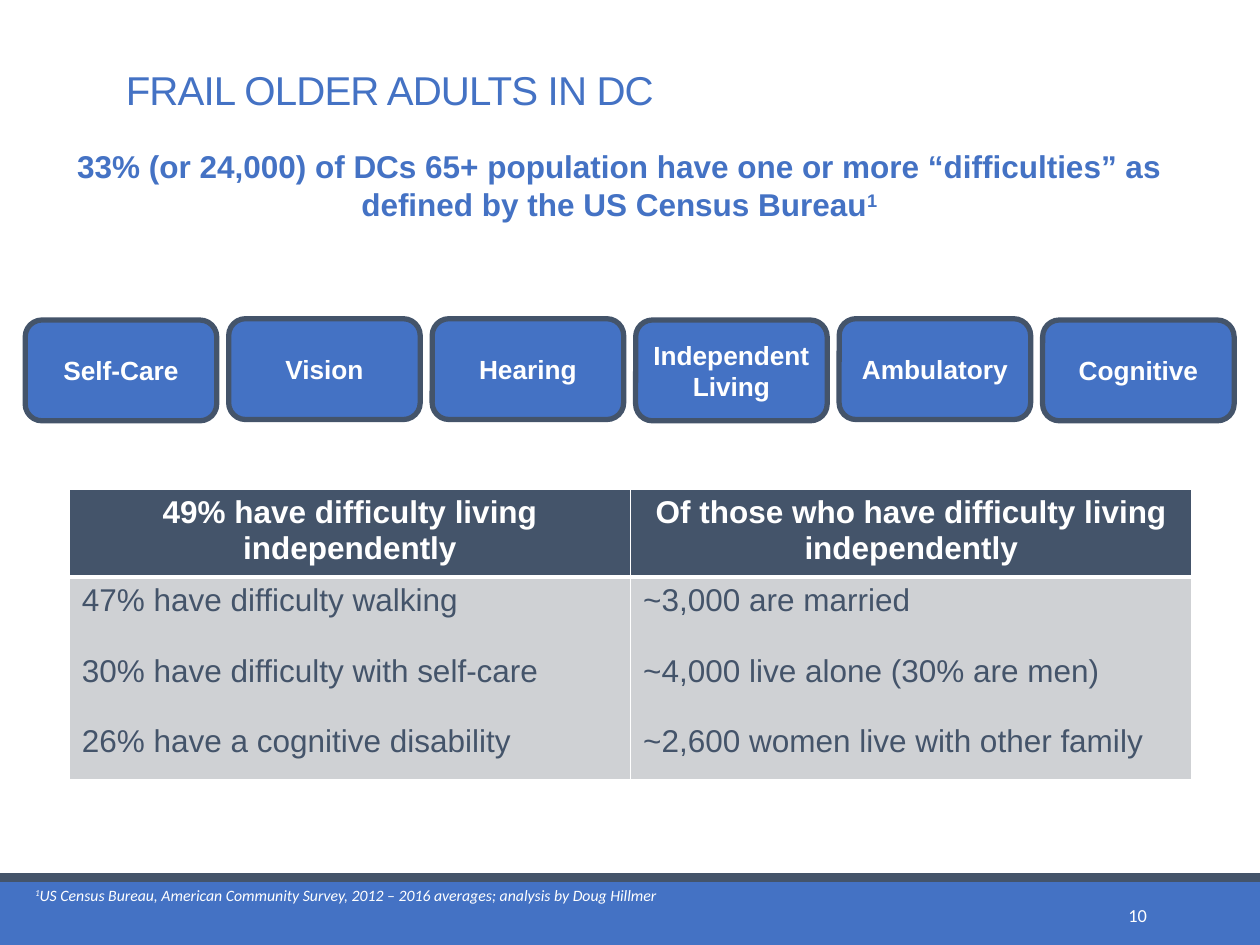
from pptx import Presentation
from pptx.dml.color import RGBColor
from pptx.enum.shapes import MSO_SHAPE
from pptx.enum.text import MSO_ANCHOR, PP_ALIGN
from pptx.oxml import parse_xml
from pptx.oxml.ns import nsdecls
from pptx.util import Inches, Pt

BLUE = RGBColor(0x44, 0x72, 0xC4)
SLATE = RGBColor(0x44, 0x54, 0x6A)
GRAY = RGBColor(0xCF, 0xD1, 0xD4)
WHITE = RGBColor(0xFF, 0xFF, 0xFF)

prs = Presentation()
prs.slide_width, prs.slide_height = Inches(10), Inches(7.5)
slide = prs.slides.add_slide(prs.slide_layouts[6])


def write(frame, text, size, color, font="Arial", bold=False, italic=False,
          align=PP_ALIGN.LEFT, anchor=MSO_ANCHOR.TOP):
    """Fill a text frame and format every run; return the first paragraph."""
    frame.text = text
    frame.word_wrap = True
    frame.vertical_anchor = anchor
    for paragraph in frame.paragraphs:
        paragraph.alignment = align
        for run in paragraph.runs:
            run.font.name, run.font.size = font, Pt(size)
            run.font.bold, run.font.italic = bold, italic
            run.font.color.rgb = color
    return frame.paragraphs[0]


def add_box(preset, left, top, width, height, fill):
    box = slide.shapes.add_shape(preset, Inches(left), Inches(top), Inches(width), Inches(height))
    box.shadow.inherit = False
    box.fill.solid()
    box.fill.fore_color.rgb = fill
    box.line.fill.background()
    return box


# Footer bands
add_box(MSO_SHAPE.RECTANGLE, 0, 7, 10, 0.5, BLUE)
add_box(MSO_SHAPE.RECTANGLE, 0, 6.93, 10, 0.07, SLATE)

# Title
title = slide.shapes.add_textbox(Inches(0.9), Inches(0.53), Inches(8.42), Inches(0.55))
title_line = write(title.text_frame, "FRAIL OLDER ADULTS IN DC", 23, BLUE)
title_line.line_spacing = 0.85
title_line.runs[0].font._element.set("spc", "-50")

# Key finding, with its footnote mark
finding = slide.shapes.add_textbox(Inches(0.14), Inches(1.12), Inches(9.55), Inches(0.71))
finding_line = write(
    finding.text_frame,
    "33% (or 24,000) of DCs 65+ population have one or more “difficulties” as "
    "defined by the US Census Bureau",
    18, BLUE, bold=True, align=PP_ALIGN.CENTER)
mark = finding_line.add_run()
mark.text = "1"
mark.font.name, mark.font.size, mark.font.bold = "Arial", Pt(18), True
mark.font.color.rgb = BLUE
mark.font._element.set("baseline", "30000")

# Six kinds of difficulty
difficulties = [("Self-Care", 2.54), ("Vision", 2.53), ("Hearing", 2.53),
                ("Independent\nLiving", 2.54), ("Ambulatory", 2.53), ("Cognitive", 2.54)]
for i, (difficulty, top) in enumerate(difficulties):
    box = add_box(MSO_SHAPE.ROUNDED_RECTANGLE, 0.2 + i * 1.615, top, 1.52, 0.8, BLUE)
    box.line.color.rgb = SLATE
    box.line.width = Pt(3)
    box.text_frame.margin_left = box.text_frame.margin_right = Inches(0.05)
    write(box.text_frame, difficulty, 15, WHITE, bold=True,
          align=PP_ALIGN.CENTER, anchor=MSO_ANCHOR.MIDDLE)

# Table of findings
columns = [
    ("49% have difficulty living independently",
     "47% have difficulty walking\n30% have difficulty with self-care\n"
     "26% have a cognitive disability"),
    ("Of those who have difficulty living independently",
     "~3,000 are married\n~4,000 live alone (30% are men)\n"
     "~2,600 women live with other family"),
]
table = slide.shapes.add_table(2, 2, Inches(0.55), Inches(3.88), Inches(8.91), Inches(2.3)).table
table.rows[0].height, table.rows[1].height = Inches(0.69), Inches(1.61)
for c, (heading, facts) in enumerate(columns):
    head, body = table.cell(0, c), table.cell(1, c)
    write(head.text_frame, heading, 18, WHITE, bold=True, align=PP_ALIGN.CENTER)
    write(body.text_frame, facts, 18, SLATE)
    for paragraph in body.text_frame.paragraphs[1:]:
        paragraph.space_before = Pt(20)
    for cell, fill, top_width, bottom_width in ((head, SLATE, 1, 3), (body, GRAY, 3, 1)):
        cell.fill.solid()
        cell.fill.fore_color.rgb = fill
        borders = (("lnL", 1), ("lnR", 1), ("lnT", top_width), ("lnB", bottom_width))
        for position, (side, width) in enumerate(borders):
            cell._tc.get_or_add_tcPr().insert(position, parse_xml(
                f'<a:{side} {nsdecls("a")} w="{Pt(width)}"><a:solidFill>'
                f'<a:srgbClr val="{WHITE}"/></a:solidFill></a:{side}>'))

# Source note and page number
source = slide.shapes.add_textbox(Inches(0.18), Inches(6.98), Inches(8.25), Inches(0.4))
source_line = write(source.text_frame, "1", 9, WHITE, font="Calibri", italic=True)
source_line.runs[0].font._element.set("baseline", "30000")
citation = source_line.add_run()
citation.text = ("US Census Bureau, American Community Survey, 2012 – 2016 averages; "
                 "analysis by Doug Hillmer")
citation.font.name, citation.font.size, citation.font.italic = "Calibri", Pt(9), True
citation.font.color.rgb = WHITE

page = slide.shapes.add_textbox(Inches(8.12), Inches(7.06), Inches(1.08), Inches(0.4))
write(page.text_frame, "10", 10.5, WHITE, font="Calibri",
      align=PP_ALIGN.RIGHT, anchor=MSO_ANCHOR.MIDDLE)

prs.save("out.pptx")
